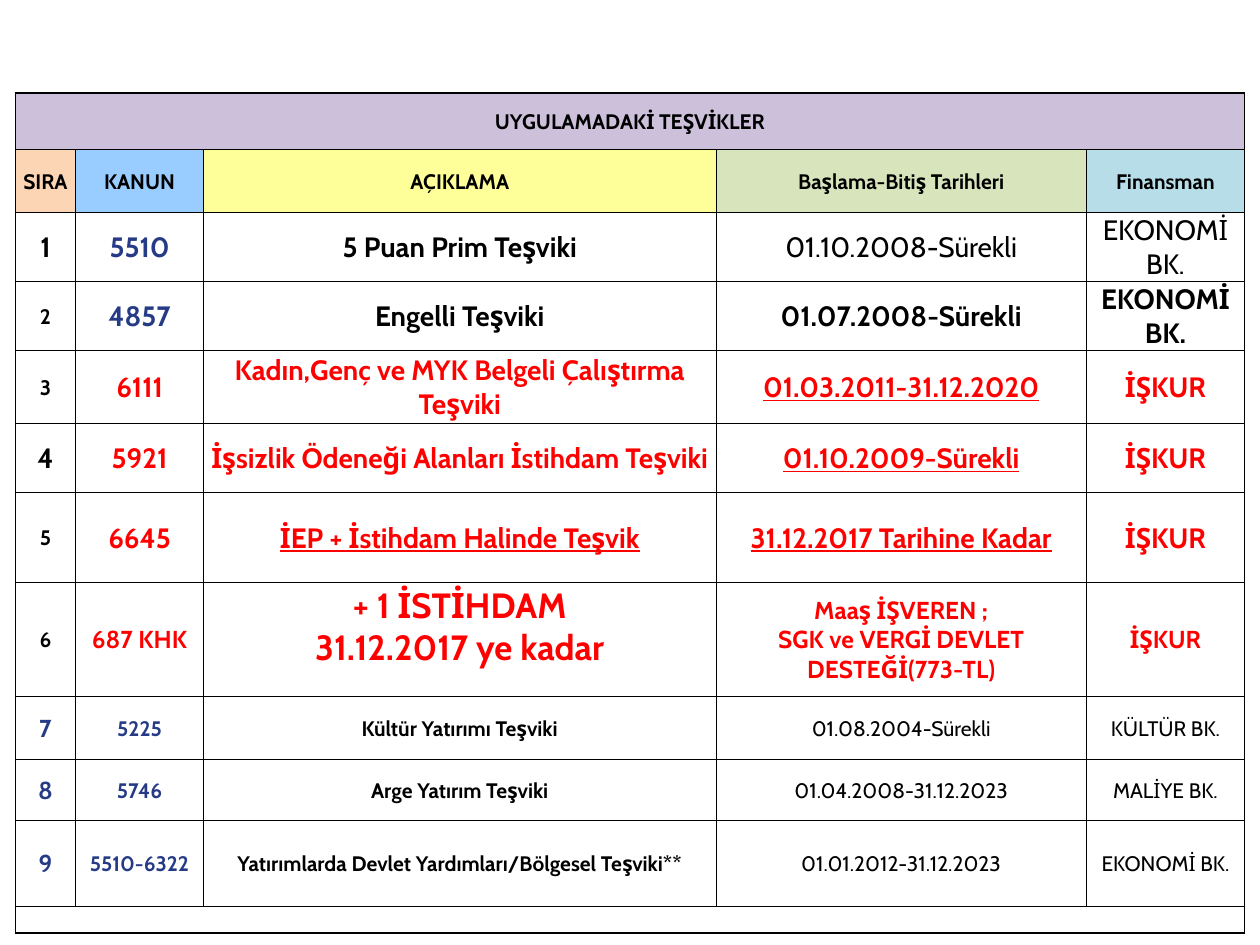
from lxml import etree
from pptx import Presentation
from pptx.dml.color import RGBColor
from pptx.enum.text import MSO_ANCHOR, PP_ALIGN
from pptx.oxml.ns import qn
from pptx.util import Pt

MIDDLE = MSO_ANCHOR.MIDDLE
CENTER = PP_ALIGN.CENTER
FONT = "Cabin"
COLORS = {
    "black": "000000", "blue": "263B86", "red": "FF0000",
    "purple": "CCC0DA", "peach": "FCD5B4", "sky": "99CCFF",
    "yellow": "FFFF99", "green": "D8E4BC", "aqua": "B7DEE8",
}

# Text styles: size, colour, bold, underline
STYLES = {
    "small": (12, "black", True, False),
    "small plain": (12, "black", False, False),
    "small blue": (12, "blue", True, False),
    "medium blue": (14, "blue", True, False),
    "medium red": (14, "red", True, False),
    "large": (16, "black", True, False),
    "large plain": (16, "black", False, False),
    "large blue": (16, "blue", True, False),
    "large red": (16, "red", True, False),
    "large red line": (16, "red", True, True),
    "huge red": (20, "red", True, False),
}

COLUMN_WIDTHS = [34.5, 73, 293, 211.5, 90.5]
HEADER_FILLS = ["peach", "sky", "yellow", "green", "aqua"]

# Rows: height, texts, styles (one style name serves the whole row)
ROWS = [
    (32.25, ["UYGULAMADAKİ TEŞVİKLER"], ["small"]),
    (36, ["SIRA", "KANUN", "AÇIKLAMA", "Başlama-Bitiş Tarihleri", "Finansman"],
     ["small"] * 5),
    (39, ["1", "5510", "5 Puan Prim Teşviki", "01.10.2008-Sürekli", "EKONOMİ BK."],
     ["large", "large blue", "large", "large plain", "large plain"]),
    (39, ["2", "4857", "Engelli Teşviki", "01.07.2008-Sürekli", "EKONOMİ BK."],
     ["small", "large blue", "large", "large", "large"]),
    (41.75, ["3", "6111", "Kadın,Genç ve MYK Belgeli Çalıştırma Teşviki",
             "01.03.2011-31.12.2020", "İŞKUR"],
     ["small", "large red", "large red", "large red line", "large red"]),
    (39.5, ["4", "5921", "İşsizlik Ödeneği Alanları İstihdam Teşviki",
            "01.10.2009-Sürekli", "İŞKUR"],
     ["large", "large red", "large red", "large red line", "large red"]),
    (51.25, ["5", "6645", "İEP + İstihdam Halinde Teşvik",
             "31.12.2017 Tarihine Kadar", "İŞKUR"],
     ["small", "large red", "large red line", "large red line", "large red"]),
    (65.25, ["6", "687 KHK", "+ 1 İSTİHDAM\n31.12.2017 ye kadar",
             "Maaş İŞVEREN ;\nSGK ve VERGİ DEVLET DESTEĞİ(773-TL)", "İŞKUR"],
     ["small", "medium red", "huge red", "medium red", "medium red"]),
    (36, ["7", "5225", "Kültür Yatırımı Teşviki", "01.08.2004-Sürekli", "KÜLTÜR BK."],
     ["medium blue", "small blue", "small", "small plain", "small plain"]),
    (34.75, ["8", "5746", "Arge Yatırım Teşviki", "01.04.2008-31.12.2023", "MALİYE BK."],
     ["medium blue", "small blue", "small", "small plain", "small plain"]),
    (49.25, ["9", "5510-6322", "Yatırımlarda Devlet Yardımları/Bölgesel Teşviki**",
             "01.01.2012-31.12.2023", "EKONOMİ BK."],
     ["medium blue", "small blue", "small", "small plain", "small plain"]),
    (15.25, [], []),
]
LAST_ROW, LAST_COLUMN = len(ROWS) - 1, len(COLUMN_WIDTHS) - 1


def add_border(cell, side, width):
    line = etree.SubElement(cell._tc.get_or_add_tcPr(), qn(f"a:ln{side}"),
                            w=str(Pt(width)))
    fill = etree.SubElement(line, qn("a:solidFill"))
    etree.SubElement(fill, qn("a:srgbClr"), val=COLORS["black"])


def write_text(cell, text, style):
    size, color, bold, underline = STYLES[style]
    font_values = {"name": FONT, "size": Pt(size), "bold": bold, "underline": underline}
    cell.text = text
    for paragraph in cell.text_frame.paragraphs:
        paragraph.alignment = CENTER
        for run in paragraph.runs:
            for name, value in font_values.items():
                setattr(run.font, name, value)
            run.font.color.rgb = RGBColor.from_string(COLORS[color])


presentation = Presentation()
presentation.slide_width, presentation.slide_height = Pt(720), Pt(540)
slide = presentation.slides.add_slide(presentation.slide_layouts[6])

# Table grid
frame = slide.shapes.add_table(
    len(ROWS), len(COLUMN_WIDTHS), Pt(8.75), Pt(53.25),
    Pt(sum(COLUMN_WIDTHS)), Pt(sum(row[0] for row in ROWS)))
table = frame.table
table.first_row = table.horz_banding = False
for column, width in zip(table.columns, COLUMN_WIDTHS):
    column.width = Pt(width)

# Cells: thick outer frame, thin inner lines
CELL_FORMAT = {"vertical_anchor": MIDDLE, "margin_left": Pt(0.75),
               "margin_right": Pt(0.75), "margin_top": Pt(0.75), "margin_bottom": 0}
for row_index, (height, texts, styles) in enumerate(ROWS):
    table.rows[row_index].height = Pt(height)
    for column_index in range(len(COLUMN_WIDTHS)):
        cell = table.cell(row_index, column_index)
        for name, value in CELL_FORMAT.items():
            setattr(cell, name, value)
        outer_sides = {"L": column_index == 0, "R": column_index == LAST_COLUMN,
                       "T": row_index == 0, "B": row_index == LAST_ROW}
        for side, is_outer in outer_sides.items():
            add_border(cell, side, 1 if is_outer else 0.5)
        cell.fill.background()
        if column_index < len(texts):
            write_text(cell, texts[column_index], styles[column_index])
        else:
            # Keep empty cells low enough for the narrow last row
            etree.SubElement(cell.text_frame.paragraphs[0]._p,
                             qn("a:endParaRPr"), sz="800")

# Heading fills
headings = [(table.cell(0, 0), "purple")]
headings += [(table.cell(1, index), fill) for index, fill in enumerate(HEADER_FILLS)]
for cell, fill in headings:
    cell.fill.solid()
    cell.fill.fore_color.rgb = RGBColor.from_string(COLORS[fill])

# The +1 employment text sits above the middle of its cell
table.cell(7, 2).margin_bottom = Pt(15)

# Full-width first and last rows
for row_index in (0, LAST_ROW):
    table.cell(row_index, 0).merge(table.cell(row_index, LAST_COLUMN))

presentation.save("out.pptx")
